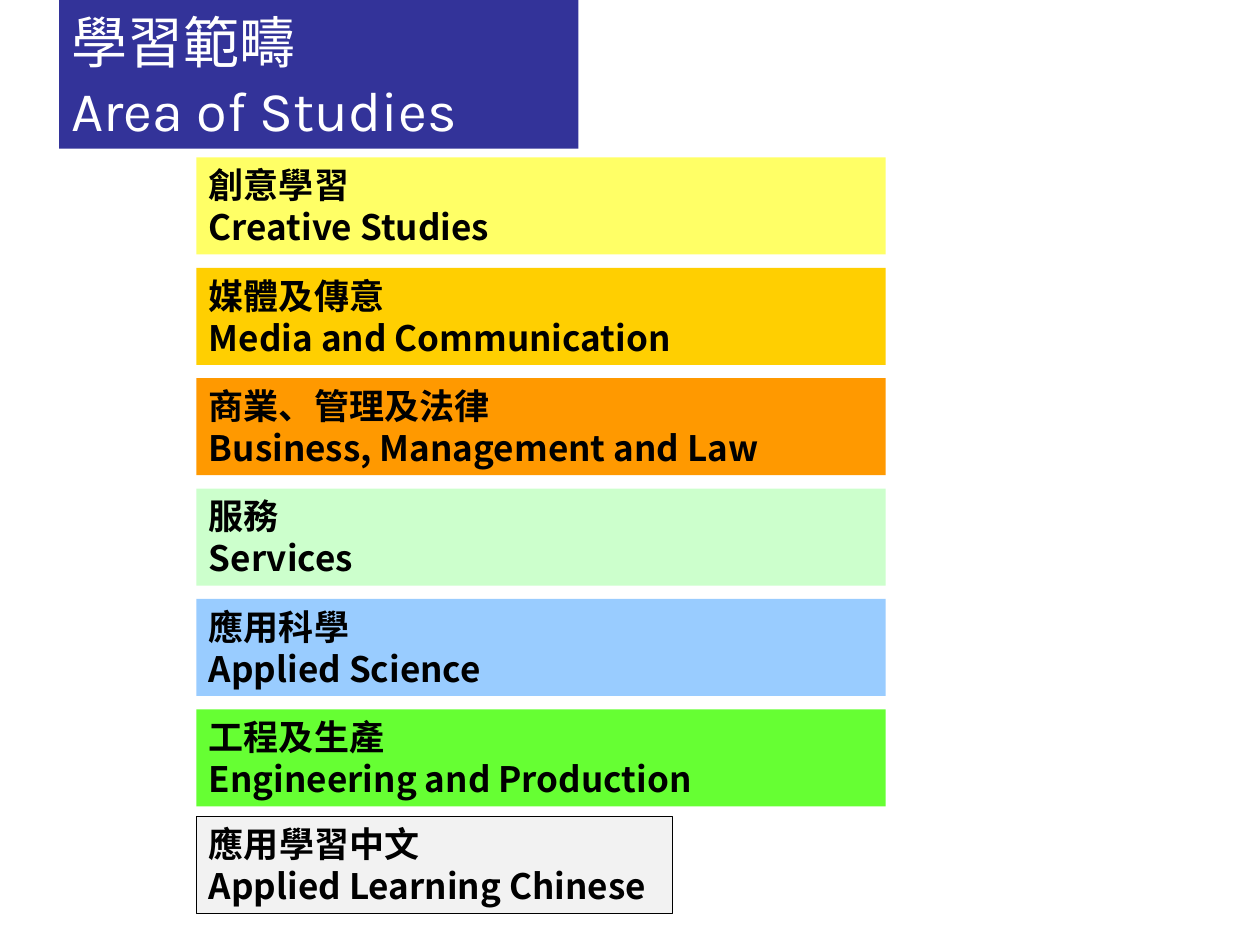
from dataclasses import dataclass

from lxml import etree
from pptx import Presentation
from pptx.dml.color import RGBColor
from pptx.enum.shapes import MSO_SHAPE
from pptx.enum.text import MSO_ANCHOR, PP_ALIGN
from pptx.oxml.ns import qn
from pptx.util import Inches, Pt

RECTANGLE = MSO_SHAPE.RECTANGLE
TOP = MSO_ANCHOR.TOP
LEFT = PP_ALIGN.LEFT


@dataclass(frozen=True)
class Theme:
    chinese_font: str = "Noto Sans CJK SC"
    title_font: str = "Karla"
    title_size: int = 32
    title_leading: int = 39
    area_size: int = 20
    area_leading: int = 24
    title_fill: str = "333399"
    title_text: str = "FFFFFF"
    text: str = "000000"
    language_fill: str = "F2F2F2"
    outline: str = "000000"


THEME = Theme()
AREAS = [
    ("創意學習", "Creative Studies", "FFFF66"),
    ("媒體及傳意", "Media and Communication", "FFCF01"),
    ("商業、管理及法律", "Business, Management and Law", "FF9900"),
    ("服務", "Services", "CCFFCC"),
    ("應用科學", "Applied Science", "99CCFF"),
    ("工程及生產", "Engineering and Production", "66FF33"),
]
AREA_LEFT, AREA_TOP, AREA_PITCH = 1.56, 1.25, 0.876
AREA_WIDTH, AREA_HEIGHT = 5.47, 0.77


def write_text(para, text, *, font, size, color, leading, bold=False):
    para.alignment = LEFT
    para.line_spacing = Pt(leading)
    span = para.add_run()
    span.text = text
    span.font.name = font
    span.font.size = Pt(size)
    span.font.bold = bold
    span.font.color.rgb = RGBColor.from_string(color)
    east_asian = etree.Element(qn("a:ea"), typeface=font)
    span.font._element.find(qn("a:latin")).addnext(east_asian)


class SlideBuilder:
    def __init__(self, page, theme):
        self.page = page
        self.theme = theme

    def box(self, left, top, width, height, fill, outline=None):
        box = self.page.shapes.add_shape(
            RECTANGLE, Inches(left), Inches(top), Inches(width), Inches(height))
        box.shadow.inherit = False
        box.fill.solid()
        box.fill.fore_color.rgb = RGBColor.from_string(fill)
        if outline:
            box.line.color.rgb = RGBColor.from_string(outline)
            box.line.width = Pt(0.75)
        else:
            box.line.fill.background()
        box.text_frame.word_wrap = True
        box.text_frame.vertical_anchor = TOP
        return box

    def title(self, chinese, english):
        theme = self.theme
        frame = self.box(0.47, 0, 4.12, 1.18, theme.title_fill).text_frame
        style = dict(size=theme.title_size, color=theme.title_text,
                     leading=theme.title_leading)
        write_text(frame.paragraphs[0], chinese, font=theme.chinese_font, **style)
        write_text(frame.add_paragraph(), english, font=theme.title_font, **style)

    def area(self, chinese, english, fill, top, width=AREA_WIDTH, outline=None):
        theme = self.theme
        frame = self.box(AREA_LEFT, top, width, AREA_HEIGHT, fill, outline).text_frame
        style = dict(font=theme.chinese_font, size=theme.area_size,
                     color=theme.text, leading=theme.area_leading, bold=True)
        write_text(frame.paragraphs[0], chinese, **style)
        write_text(frame.add_paragraph(), english, **style)


def main():
    deck = Presentation()
    deck.slide_width, deck.slide_height = Inches(10), Inches(7.5)
    page = deck.slides.add_slide(deck.slide_layouts[6])
    builder = SlideBuilder(page, THEME)
    builder.title("學習範疇", "Area of Studies")
    for row, (chinese, english, fill) in enumerate(AREAS):
        builder.area(chinese, english, fill, AREA_TOP + row * AREA_PITCH)
    builder.area("應用學習中文", "Applied Learning Chinese", THEME.language_fill,
                 top=6.48, width=3.78, outline=THEME.outline)
    deck.save("out.pptx")


if __name__ == "__main__":
    main()
